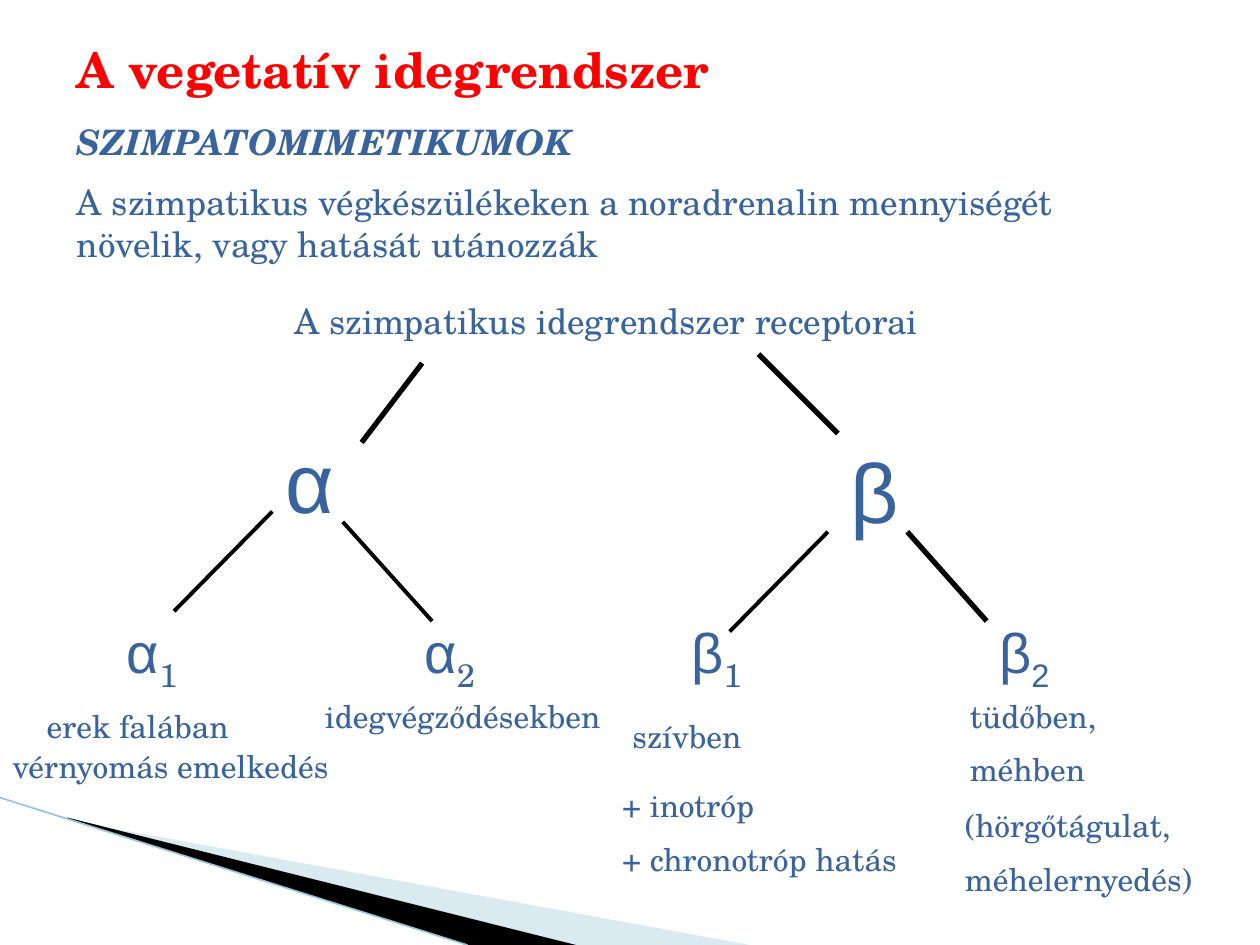
from dataclasses import dataclass
from typing import Optional

import pptx
import pptx.dml.color
import pptx.enum.shapes
import pptx.enum.text
import pptx.oxml.ns
import pptx.oxml.xmlchemy
import pptx.util

Cm = pptx.util.Cm
Pt = pptx.util.Pt


@dataclass(frozen=True)
class Theme:
    serif: str = "TeX Gyre Schola"
    sans: str = "Arial"
    text: str = "39639D"
    title: str = "FF0000"
    black: str = "000000"
    white: str = "FFFFFF"
    wave: str = "A0CBDC"
    edge: str = "97C5D8"
    title_pt: int = 28
    body_pt: int = 20
    label_pt: int = 18
    group_pt: int = 48
    receptor_pt: int = 32


THEME = Theme()


@dataclass(frozen=True)
class Run:
    text: str
    size: int = THEME.label_pt
    font: str = THEME.serif
    color: str = THEME.text
    bold: bool = False
    italic: bool = False
    subscript: bool = False


@dataclass(frozen=True)
class Box:
    left: float
    top: float
    width: float
    height: float
    paragraphs: list[list[Run]]
    fill: Optional[str] = None
    middle: bool = False


@dataclass(frozen=True)
class Line:
    x1: float
    y1: float
    x2: float
    y2: float
    weight: float
    color: str = THEME.black


def rgb(color: str) -> pptx.dml.color.RGBColor:
    return pptx.dml.color.RGBColor.from_string(color)


def draw_line(s, line: Line) -> None:
    c = s.shapes.add_connector(
        pptx.enum.shapes.MSO_CONNECTOR.STRAIGHT,
        Cm(line.x1), Cm(line.y1), Cm(line.x2), Cm(line.y2))
    c.line.color.rgb = rgb(line.color)
    c.line.width = Pt(line.weight)
    c._element.spPr.append(pptx.oxml.xmlchemy.OxmlElement("a:effectLst"))


def draw_polygon(s, points: list[tuple[float, float]], color: str,
                 opacity: int = 100) -> None:
    start, *rest = [(Cm(x), Cm(y)) for x, y in points]
    builder = s.shapes.build_freeform(*start)
    builder.add_line_segments(rest)
    sp = builder.convert_to_shape()
    sp.shadow.inherit = False
    sp.line.fill.background()
    sp.fill.solid()
    sp.fill.fore_color.rgb = rgb(color)
    if opacity < 100:
        clr = sp._element.spPr.find(".//" + pptx.oxml.ns.qn("a:srgbClr"))
        alpha = pptx.oxml.xmlchemy.OxmlElement("a:alpha")
        alpha.set("val", str(opacity * 1000))
        clr.append(alpha)


def draw_box(s, box: Box) -> None:
    area = Cm(box.left), Cm(box.top), Cm(box.width), Cm(box.height)
    if box.fill:
        sp = s.shapes.add_shape(pptx.enum.shapes.MSO_SHAPE.RECTANGLE, *area)
        sp.shadow.inherit = False
        sp.line.fill.background()
        sp.fill.solid()
        sp.fill.fore_color.rgb = rgb(box.fill)
    else:
        sp = s.shapes.add_textbox(*area)
    tf = sp.text_frame
    tf.word_wrap = True
    anchor = pptx.enum.text.MSO_ANCHOR
    tf.vertical_anchor = anchor.MIDDLE if box.middle else anchor.TOP
    for i, runs in enumerate(box.paragraphs):
        p = tf.add_paragraph() if i else tf.paragraphs[0]
        p.alignment = pptx.enum.text.PP_ALIGN.LEFT
        if i:
            p.space_before = Pt(runs[0].size / 2)
        for run in runs:
            r = p.add_run()
            r.text = run.text
            r.font.name = run.font
            r.font.size = Pt(run.size)
            r.font.bold = run.bold
            r.font.italic = run.italic
            r.font.color.rgb = rgb(run.color)
            if run.subscript:
                r._r.get_or_add_rPr().set("baseline", "-25000")


def label(left: float, top: float, width: float, *texts: str,
          fill: Optional[str] = None) -> Box:
    height = 1.02 + 1.14 * (len(texts) - 1)
    return Box(left, top, width, height, [[Run(t)] for t in texts], fill)


def group(left: float, top: float, width: float, letter: str) -> Box:
    return Box(left, top, width, 2.29,
               [[Run(letter, THEME.group_pt, THEME.sans)]])


def receptor(left: float, width: float, letter: str, number: str,
             number_font: str = THEME.serif) -> Box:
    return Box(left, 12.32, width, 1.6, [[
        Run(letter, THEME.receptor_pt, THEME.sans),
        Run(number, THEME.receptor_pt, number_font, subscript=True)]])


HEADINGS = [
    Box(1.3, 0.43, 19.69, 1.9,
        [[Run("A vegetatív idegrendszer", THEME.title_pt, color=THEME.title, bold=True)]],
        middle=True),
    Box(1.3, 2.31, 21.79, 3.25, [
        [Run("SZIMPATOMIMETIKUMOK", THEME.body_pt, bold=True, italic=True)],
        [Run("A szimpatikus végkészülékeken a noradrenalin mennyiségét "
             "növelik, vagy hatását utánozzák", THEME.body_pt)]]),
    Box(5.69, 5.92, 16.99, 1.12,
        [[Run("A szimpatikus idegrendszer receptorai", THEME.body_pt)]]),
]

BRANCHES = [
    Line(8.51, 7.32, 7.29, 8.92, 3),
    Line(15.29, 7.14, 16.89, 8.74, 3),
    Line(5.49, 10.31, 3.51, 12.32, 2.25),
    Line(6.91, 10.52, 8.71, 12.52, 2.25),
    Line(16.69, 10.72, 14.71, 12.73, 2.25),
    Line(18.29, 10.72, 19.89, 12.52, 3),
]

RECEPTORS = [
    group(5.51, 8.53, 2.79, "α"),
    group(16.89, 8.74, 4.39, "β"),
    receptor(2.31, 2.59, "α", "1"),
    receptor(8.31, 2.59, "α", "2"),
    receptor(13.69, 2.01, "β", "1"),
    receptor(19.89, 2.01, "β", "2", THEME.sans),
]

EFFECTS = [
    label(0.69, 14.12, 4.39, "erek falában", fill=THEME.white),
    label(0, 14.94, 8.61, "vérnyomás emelkedés", fill=THEME.white),
    label(6.3, 13.92, 6.2, "idegvégződésekben"),
    label(12.5, 14.33, 3.4, "szívben"),
    label(12.29, 15.72, 7.21, "+ inotróp", "+ chronotróp hatás"),
    label(19.3, 13.92, 5.59, "tüdőben,", "méhben"),
    label(19.2, 16.13, 6.2, "(hörgőtágulat,", "méhelernyedés)"),
]


def main() -> None:
    prs = pptx.Presentation()
    prs.slide_width, prs.slide_height = Cm(25.4), Cm(19.05)
    s = prs.slides.add_slide(prs.slide_layouts[6])

    # Corner decoration
    draw_polygon(s, [(1.4, 16.54), (15.11, 19.05), (11.58, 19.05), (1.4, 16.51)],
                 THEME.wave, opacity=40)
    draw_polygon(s, [(1.35, 16.48), (11.61, 19.05), (9.45, 19.05), (1.37, 16.51)],
                 THEME.black)
    draw_line(s, Line(0, 16.08, 9.42, 19.05, 0.95, THEME.edge))

    # Receptor tree
    for line in BRANCHES:
        draw_line(s, line)
    for box in HEADINGS + RECEPTORS + EFFECTS:
        draw_box(s, box)

    prs.save("out.pptx")


if __name__ == "__main__":
    main()
